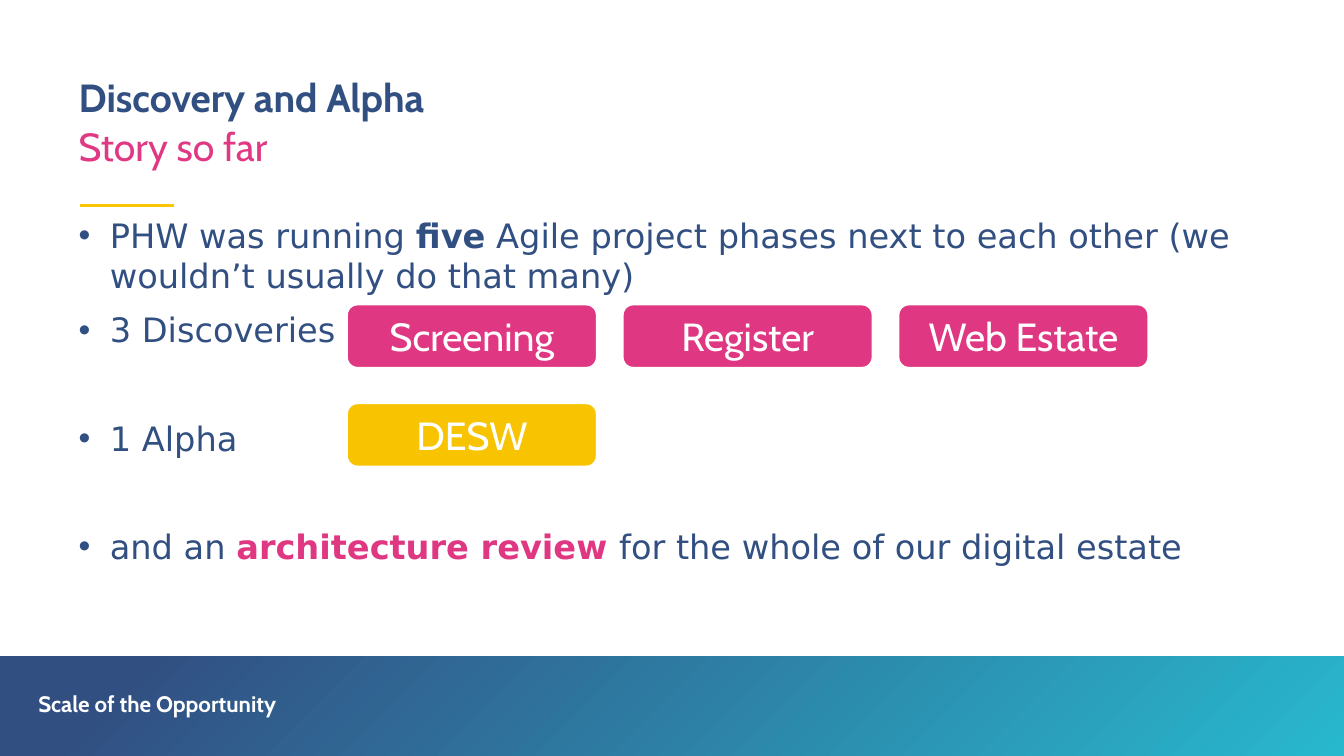
"""Build the Discovery and Alpha story slide."""
from lxml.etree import SubElement
from pptx import Presentation
from pptx.dml.color import RGBColor
from pptx.enum.shapes import MSO_CONNECTOR, MSO_SHAPE
from pptx.enum.text import MSO_ANCHOR, MSO_AUTO_SIZE, PP_ALIGN
from pptx.oxml.ns import qn
from pptx.util import Inches, Pt

COLOURS = {
    "navy": "324F82",
    "teal": "28B8CE",
    "pink": "DF3782",
    "subtitle": "E03882",
    "button_yellow": "F8C402",
    "rule_yellow": "F9C402",
    "white": "FFFFFF",
}


def colour(name):
    """Return the named colour."""
    return RGBColor.from_string(COLOURS[name])


def set_text(shape, text, size, colour_name, bold=False):
    """Write one formatted heading paragraph in a frame without margins."""
    frame = shape.text_frame
    frame.text = text
    frame.word_wrap = True
    frame.auto_size = MSO_AUTO_SIZE.NONE
    frame.vertical_anchor = MSO_ANCHOR.TOP
    frame.margin_left = frame.margin_right = frame.margin_top = frame.margin_bottom = 0
    paragraph = frame.paragraphs[0]
    paragraph.alignment = PP_ALIGN.LEFT
    paragraph.line_spacing = 0.9
    paragraph.space_before = Pt(0)
    font = paragraph.runs[0].font
    font.name = "Cabin"
    font.size = Pt(size)
    font.bold = bold
    font.color.rgb = colour(colour_name)


presentation = Presentation()
presentation.slide_width = Inches(13.33)
presentation.slide_height = Inches(7.5)
slide = presentation.slides.add_slide(presentation.slide_layouts[5])
shapes = slide.shapes

title = shapes.title
title.left, title.top = Inches(0.78), Inches(0.78)
title.width, title.height = Inches(11.77), Inches(0.43)
set_text(title, "Discovery and Alpha", 28, "navy", bold=True)

subtitle = shapes.add_textbox(Inches(0.78), Inches(1.27), Inches(11.77), Inches(0.43))
set_text(subtitle, "Story so far", 28, "subtitle")

rule = shapes.add_connector(
    MSO_CONNECTOR.STRAIGHT, Inches(0.79), Inches(2.04), Inches(1.73), Inches(2.04)
)
rule.line.color.rgb = colour("rule_yellow")
rule.line.width = Pt(2.25)
SubElement(rule._element.spPr, qn("a:effectLst"))

band = shapes.add_shape(
    MSO_SHAPE.RECTANGLE, Inches(0), Inches(6.51), Inches(13.33), Inches(0.99)
)
band.shadow.inherit = False
band.line.fill.background()
band.fill.gradient()
band.fill.gradient_angle = 315
for stop, (position, name) in zip(band.fill.gradient_stops, [(0.1, "navy"), (1, "teal")]):
    stop.position = position
    stop.color.rgb = colour(name)

footer = shapes.add_textbox(Inches(0.38), Inches(6.88), Inches(3.93), Inches(0.24))
set_text(footer, "Scale of the Opportunity", 16, "white", bold=True)

bullets = [
    (0, [
        ("PHW was running ", "navy", False),
        ("five", "navy", True),
        (" Agile project phases next to each other (we wouldn’t usually do that many)",
         "navy", False),
    ]),
    (10, [("3 Discoveries", "navy", False)]),
    (48.5, [("1 Alpha", "navy", False)]),
    (48.5, [
        ("and an ", "navy", False),
        ("architecture review ", "pink", True),
        ("for the whole of our digital estate", "navy", False),
    ]),
]
body = shapes.add_textbox(Inches(0.78), Inches(2.13), Inches(11.77), Inches(3.53))
frame = body.text_frame
frame.word_wrap = True
frame.margin_left = frame.margin_right = frame.margin_top = frame.margin_bottom = 0
for index, (space_before, pieces) in enumerate(bullets):
    paragraph = frame.add_paragraph() if index else frame.paragraphs[0]
    properties = paragraph._p.get_or_add_pPr()
    properties.set("marL", str(Inches(0.31)))
    properties.set("indent", str(-Inches(0.31)))
    SubElement(properties, qn("a:buFont"), typeface="Arial")
    SubElement(properties, qn("a:buChar"), char="•")
    paragraph.space_before = Pt(space_before)
    for text, name, bold in pieces:
        run = paragraph.add_run()
        run.text = text
        run.font.name = "DejaVu Sans"
        run.font.size = Pt(24)
        run.font.bold = bold
        run.font.color.rgb = colour(name)

button_rows = [
    (3.02, "pink", ["Screening", "Register", "Web Estate"]),
    (4, "button_yellow", ["DESW"]),
]
for top, fill_name, labels in button_rows:
    for column, label in enumerate(labels):
        button = shapes.add_shape(
            MSO_SHAPE.ROUNDED_RECTANGLE,
            Inches(3.44 + 2.735 * column), Inches(top), Inches(2.48), Inches(0.63),
        )
        button.shadow.inherit = False
        button.fill.solid()
        button.fill.fore_color.rgb = colour(fill_name)
        button.line.color.rgb = colour("white")
        button.line.width = Pt(1.5)
        button.text_frame.text = label
        button.text_frame.vertical_anchor = MSO_ANCHOR.MIDDLE
        paragraph = button.text_frame.paragraphs[0]
        paragraph.alignment = PP_ALIGN.CENTER
        font = paragraph.runs[0].font
        font.name = "Cabin"
        font.size = Pt(28)
        font.color.rgb = colour("white")

presentation.save("out.pptx")
